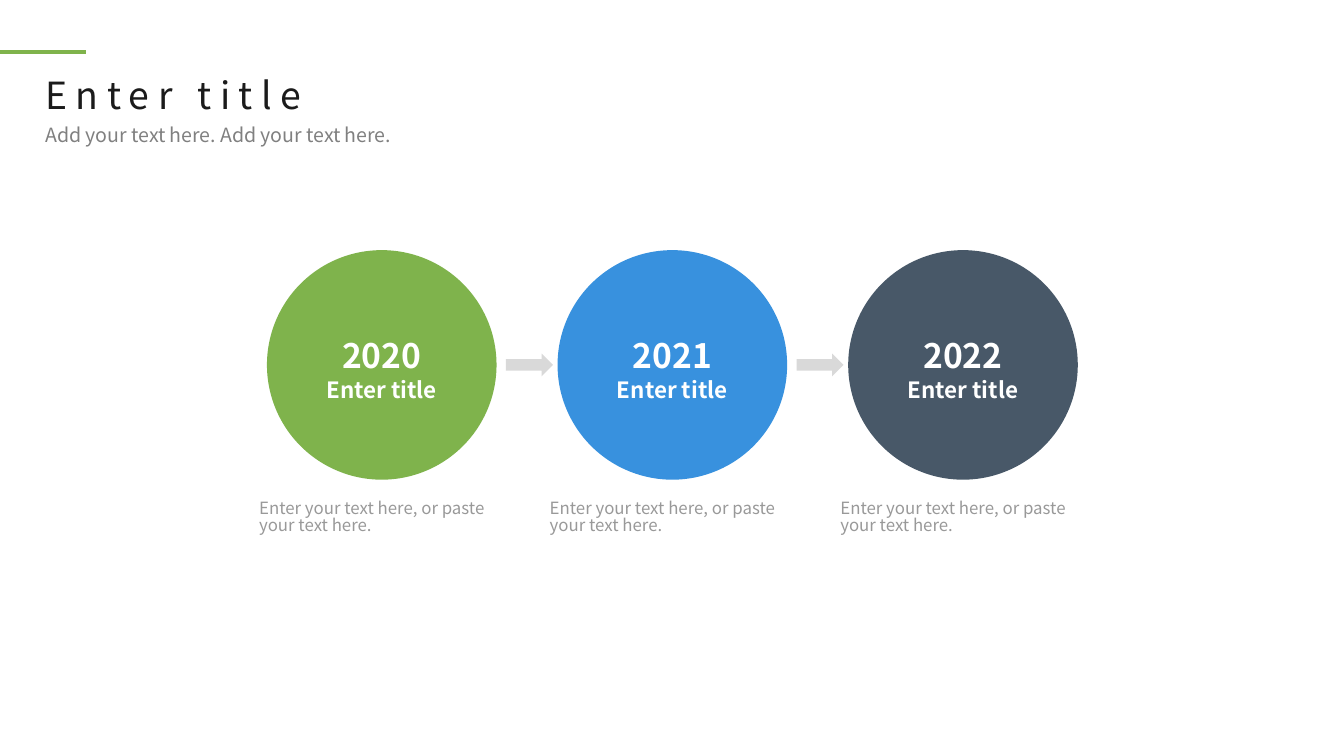
from pptx import Presentation
from pptx import util as u
from pptx.dml import color as col
from pptx.enum import shapes, text
from pptx.oxml import ns
from lxml import etree

Pt = u.Pt
GREEN, BLUE, SLATE = "7FB34C", "3891DE", "485868"
WHITE, SILVER = "FFFFFF", "D9D9D9"


def tint(code):
    return col.RGBColor.from_string(code)


class Page:
    font = "Noto Sans CJK JP"

    def __init__(self, slide):
        self.slide = slide

    def shape(self, kind, x, y, w, h, fill):
        item = self.slide.shapes.add_shape(kind, Pt(x), Pt(y), Pt(w), Pt(h))
        item.shadow.inherit = False
        item.fill.solid()
        item.fill.fore_color.rgb = tint(fill)
        item.line.fill.background()

    def line(self, x1, y1, x2, y2, hue, width):
        item = self.slide.shapes.add_connector(
            shapes.MSO_CONNECTOR.STRAIGHT, Pt(x1), Pt(y1), Pt(x2), Pt(y2))
        item.line.color.rgb = tint(hue)
        item.line.width = Pt(width)
        etree.SubElement(item._element.spPr, ns.qn("a:effectLst"))

    def text(self, words, x, y, w, h, size, hue, bold=False, align="LEFT",
             anchor="MIDDLE", lead=0.8, pad=(7.2, 3.6), track=0):
        box = self.slide.shapes.add_textbox(Pt(x), Pt(y), Pt(w), Pt(h))
        frame = box.text_frame
        frame.word_wrap = True
        frame.vertical_anchor = getattr(text.MSO_ANCHOR, anchor)
        frame.margin_left = frame.margin_right = Pt(pad[0])
        frame.margin_top = frame.margin_bottom = Pt(pad[1])
        para = frame.paragraphs[0]
        para.alignment = getattr(text.PP_ALIGN, align)
        para.line_spacing = lead
        run = para.add_run()
        run.text = words
        para.font.name = self.font
        para.font.size = Pt(size)
        para.font.bold = bold
        para.font.color.rgb = tint(hue)
        if track:
            run._r.get_or_add_rPr().set("spc", str(int(track * 100)))


def main():
    deck = Presentation()
    deck.slide_width, deck.slide_height = Pt(720), Pt(405)
    page = Page(deck.slides.add_slide(deck.slide_layouts[6]))

    page.line(0, 28, 46, 28, GREEN, 2)
    page.text("Enter title", 17.3, 39.6, 161, 26.6, 20, "1B1B1B", track=4.5)
    page.text("Add your text here. Add your text here.",
              17.3, 64.8, 304.6, 17.3, 10.5, "808080")

    left, top, size, step = 143, 134, 123, 155.7
    steps = [("2020", GREEN), ("2021", BLUE), ("2022", SLATE)]
    label = dict(bold=True, align="CENTER", lead=1, pad=(5, 3))
    for i, (year, fill) in enumerate(steps):
        x = left + i * step
        mid = x + size / 2
        page.shape(shapes.MSO_SHAPE.OVAL, x, top, size, size, fill)
        if i < len(steps) - 1:
            page.shape(shapes.MSO_SHAPE.RIGHT_ARROW,
                       x + size + 5, 189.4, 25.2, 12.2, SILVER)
        page.text(year, mid - 30, 172, 60, 36, 18, WHITE, **label)
        page.text("Enter title", mid - 37.5, 198.5, 75, 20, 12, WHITE, **label)
        page.text("Enter your text here, or paste your text here.",
                  x - 4.2, 269, 131, 47, 9, "999999", anchor="TOP", pad=(0, 0))

    deck.save("out.pptx")


if __name__ == "__main__":
    main()
